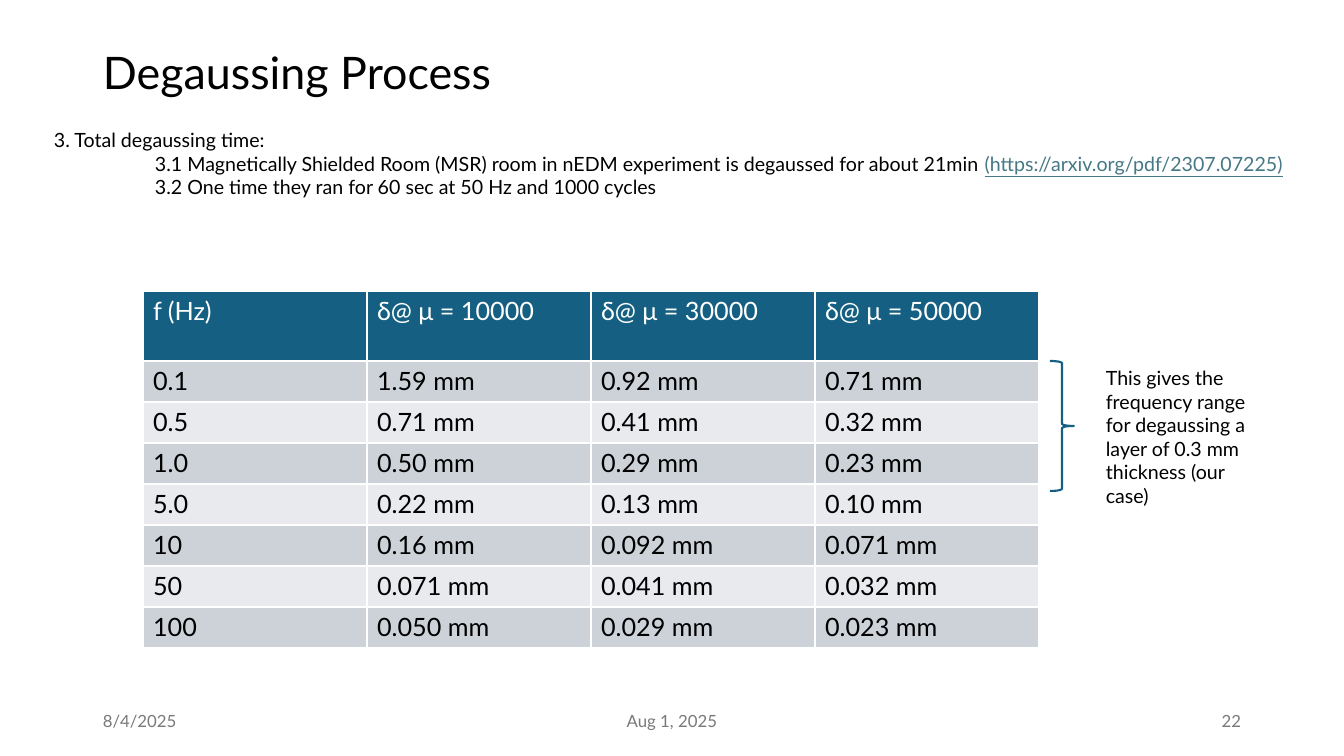
from pptx import Presentation
from pptx import util as u
from pptx.dml.color import RGBColor
from pptx.enum import shapes, text

PX = 914400 / 100.8
BLACK, WHITE, GREY, TEAL, LINK = "000000", "FFFFFF", "797979", "156082", "467886"
BANDS = ["CCD2D8", "E8EAED"]


def px(*lengths):
    return [u.Emu(round(length * PX)) for length in lengths]


def add_span(para, words, size, color):
    span = para.add_run()
    span.text = words
    span.font.name = "Lato"
    span.font.size = u.Pt(size)
    span.font.bold = False
    span.font.color.rgb = RGBColor.from_string(color)
    return span


deck = Presentation()
deck.slide_width, deck.slide_height = px(1344, 756)
page = deck.slides.add_slide(deck.slide_layouts[6])

TOP, MIDDLE = text.MSO_ANCHOR.TOP, text.MSO_ANCHOR.MIDDLE
LEFT, CENTER, RIGHT = text.PP_ALIGN.LEFT, text.PP_ALIGN.CENTER, text.PP_ALIGN.RIGHT
text_boxes = [
    ("Degaussing Process", (93, 40, 1119, 70), 32, BLACK, MIDDLE, LEFT),
    ("8/4/2025", (93, 701, 302, 40), 12, GREY, MIDDLE, LEFT),
    ("Aug 1, 2025", (445, 701, 454, 40), 12, GREY, MIDDLE, CENTER),
    ("22", (949, 701, 302, 40), 12, GREY, MIDDLE, RIGHT),
    ("3. Total degaussing time:", (44, 123, 1299, 112), 14, BLACK, TOP, LEFT),
    ("This gives the frequency range for degaussing a layer of 0.3 mm thickness (our case)",
     (1096, 361, 185, 152), 14, BLACK, TOP, LEFT),
]
frames = []
for words, place, size, color, anchor, align in text_boxes:
    frame = page.shapes.add_textbox(*px(*place)).text_frame
    frame.word_wrap = True
    frame.vertical_anchor = anchor
    frame.paragraphs[0].alignment = align
    add_span(frame.paragraphs[0], words, size, color)
    frames.append(frame)
frames[0].paragraphs[0].line_spacing = 0.9

time_notes = frames[4]
for words, link in [
    ("3.1 Magnetically Shielded Room (MSR) room in nEDM experiment is degaussed for about 21min ",
     "(https://arxiv.org/pdf/2307.07225)"),
    ("3.2 One time they ran for 60 sec at 50 Hz and 1000 cycles", ""),
]:
    para = time_notes.add_paragraph()
    para._p.get_or_add_pPr().set("marL", str(px(101)[0]))
    add_span(para, words, 14, BLACK)
    if link:
        add_span(para, link, 14, LINK).font.underline = True

skin_depths = [
    ["f (Hz)", "δ@ μ = 10000", "δ@ μ = 30000", "δ@ μ = 50000"],
    ["0.1", "1.59 mm", "0.92 mm", "0.71 mm"],
    ["0.5", "0.71 mm", "0.41 mm", "0.32 mm"],
    ["1.0", "0.50 mm", "0.29 mm", "0.23 mm"],
    ["5.0", "0.22 mm", "0.13 mm", "0.10 mm"],
    ["10", "0.16 mm", "0.092 mm", "0.071 mm"],
    ["50", "0.071 mm", "0.041 mm", "0.032 mm"],
    ["100", "0.050 mm", "0.029 mm", "0.023 mm"],
]
table = page.shapes.add_table(8, 4, *px(143, 291, 896, 357)).table
for row, values in enumerate(skin_depths):
    table.rows[row].height = px(41 if row else 70)[0]
    for column, value in enumerate(values):
        cell = table.cell(row, column)
        cell.fill.solid()
        cell.fill.fore_color.rgb = RGBColor.from_string(BANDS[(row - 1) % 2] if row else TEAL)
        add_span(cell.text_frame.paragraphs[0], value, 18, BLACK if row else WHITE)

brace = page.shapes.add_shape(shapes.MSO_SHAPE.RIGHT_BRACE, *px(1050, 361, 24, 130))
brace.shadow.inherit = False
brace.fill.background()
brace.line.color.rgb = RGBColor.from_string(TEAL)
brace.line.width = u.Pt(1.5)

deck.save("out.pptx")
